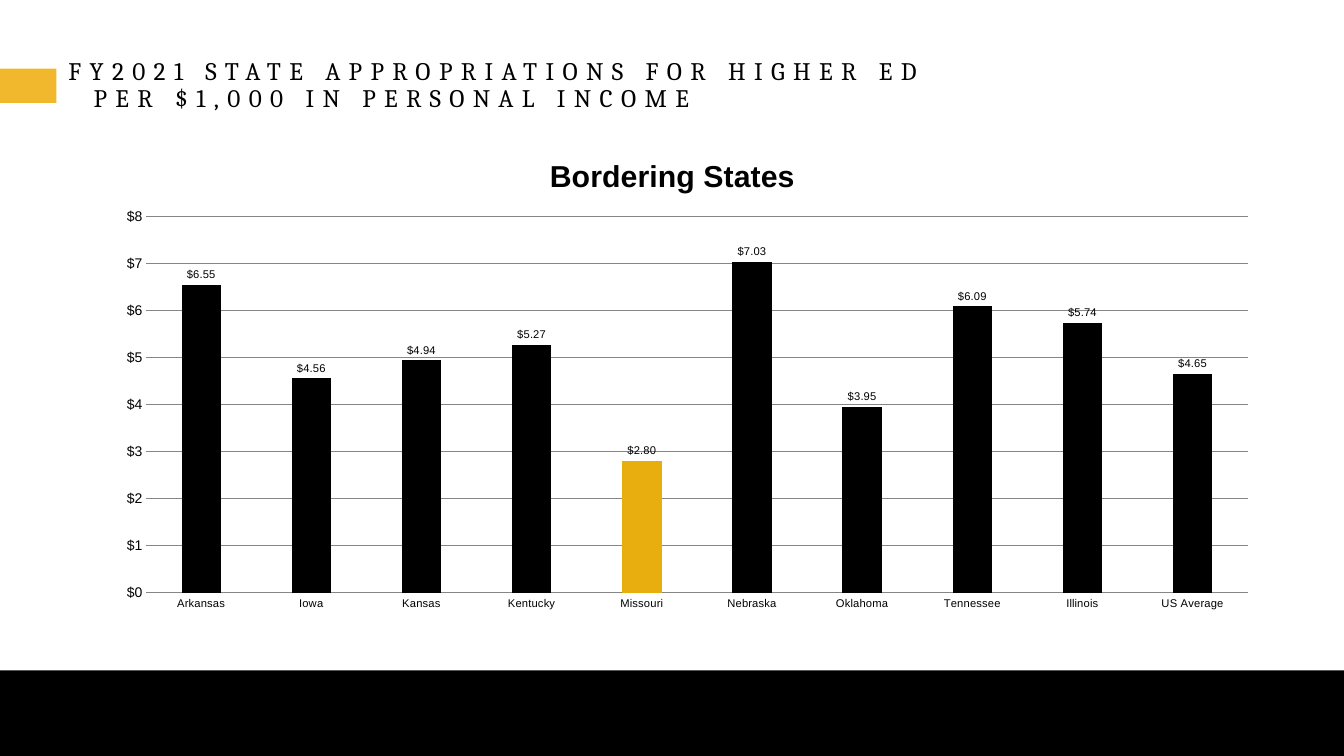
from dataclasses import dataclass

from lxml import etree
from pptx import Presentation
from pptx.chart.data import CategoryChartData
from pptx.dml.color import RGBColor
from pptx.enum.chart import XL_CHART_TYPE, XL_LABEL_POSITION, XL_TICK_MARK
from pptx.enum.shapes import MSO_SHAPE
from pptx.enum.text import MSO_ANCHOR, PP_ALIGN
from pptx.oxml.ns import qn
from pptx.util import Inches, Pt

RECT = MSO_SHAPE.RECTANGLE
COLUMNS = XL_CHART_TYPE.COLUMN_CLUSTERED
OUTSIDE = XL_LABEL_POSITION.OUTSIDE_END
NO_TICK = XL_TICK_MARK.NONE
MIDDLE = MSO_ANCHOR.MIDDLE
LEFT = PP_ALIGN.LEFT

APPROPRIATIONS = {
    "Arkansas": 6.55, "Iowa": 4.56, "Kansas": 4.94, "Kentucky": 5.27,
    "Missouri": 2.80, "Nebraska": 7.03, "Oklahoma": 3.95,
    "Tennessee": 6.09, "Illinois": 5.74, "US Average": 4.65,
}


@dataclass(frozen=True)
class Theme:
    black: RGBColor = RGBColor(0x00, 0x00, 0x00)
    gold: RGBColor = RGBColor(0xF1, 0xB8, 0x2D)
    highlight: RGBColor = RGBColor(0xE8, 0xAE, 0x10)
    grid: RGBColor = RGBColor(0x86, 0x86, 0x86)
    heading_font: str = "Cambria"
    chart_font: str = "Arial"
    heading_size: Pt = Pt(18)
    title_size: Pt = Pt(21.6)
    axis_size: Pt = Pt(10)
    label_size: Pt = Pt(8)
    tracking: int = 600


class SlideBuilder:
    def __init__(self, prs, theme):
        self.theme = theme
        self.slide = prs.slides.add_slide(prs.slide_layouts[6])
        self.col = prs.slide_width / 100
        self.row = prs.slide_height / 100

    def box(self, col, row, cols, rows):
        return (round(col * self.col), round(row * self.row),
                round(cols * self.col), round(rows * self.row))

    def style(self, font, size, name, bold=False):
        font.size = size
        font.name = name
        font.bold = bold
        font.color.rgb = self.theme.black

    def bar(self, cell, color):
        sp = self.slide.shapes.add_shape(RECT, *self.box(*cell))
        sp.shadow.inherit = False
        sp.fill.solid()
        sp.fill.fore_color.rgb = color
        sp.line.fill.background()

    def heading(self, cell, text):
        sp = self.slide.shapes.add_textbox(*self.box(*cell))
        tf = sp.text_frame
        tf.word_wrap = True
        tf.vertical_anchor = MIDDLE
        p = tf.paragraphs[0]
        p.text = text
        p.alignment = LEFT
        p.line_spacing = 0.9
        pPr = p._p.get_or_add_pPr()
        pPr.set("marL", str(Inches(0.25)))
        pPr.set("indent", str(-Inches(0.25)))
        for r in p.runs:
            self.style(r.font, self.theme.heading_size, self.theme.heading_font)
            r.font._element.set("spc", str(self.theme.tracking))

    def column_chart(self, cell, title, values, highlighted, plot_area):
        theme = self.theme
        data = CategoryChartData()
        data.categories = list(values)
        data.add_series(title, list(values.values()))
        frame = self.slide.shapes.add_chart(COLUMNS, *self.box(*cell), data)
        chart = frame.chart
        self.style(chart.font, theme.heading_size, theme.chart_font)
        chart.has_legend = False
        chart.has_title = True
        tf = chart.chart_title.text_frame
        tf.text = title
        self.style(tf.paragraphs[0].runs[0].font, theme.title_size, theme.chart_font, True)

        plot = chart.plots[0]
        plot.gap_width = 180
        plot.overlap = 75
        plot.vary_by_categories = False
        series = plot.series[0]
        series.format.fill.solid()
        series.format.fill.fore_color.rgb = theme.black
        fill = series.points[list(values).index(highlighted)].format.fill
        fill.solid()
        fill.fore_color.rgb = theme.highlight

        plot.has_data_labels = True
        labels = plot.data_labels
        labels.show_value = True
        labels.position = OUTSIDE
        labels.number_format = '"$"#,##0.00'
        labels.number_format_is_linked = False
        self.style(labels.font, theme.label_size, theme.chart_font)
        self.axes(chart)
        self.place_plot(chart, plot_area)

    def axes(self, chart):
        theme = self.theme
        cat, val = chart.category_axis, chart.value_axis
        for axis, size in ((cat, theme.label_size), (val, theme.axis_size)):
            axis.major_tick_mark = NO_TICK
            axis.minor_tick_mark = NO_TICK
            self.style(axis.tick_labels.font, size, theme.chart_font)
        cat.format.line.color.rgb = theme.grid
        val.format.line.fill.background()
        val.minimum_scale, val.maximum_scale, val.major_unit = 0, 8, 1
        val.tick_labels.number_format = '"$"#,##0'
        val.tick_labels.number_format_is_linked = False
        val.has_major_gridlines = True
        line = val.major_gridlines.format.line
        line.color.rgb = theme.grid
        line.width = Pt(0.75)

    def place_plot(self, chart, shares):
        area = chart._chartSpace.find(".//" + qn("c:plotArea"))
        for old in area.findall(qn("c:layout")):
            area.remove(old)
        layout = etree.Element(qn("c:layout"))
        manual = etree.SubElement(layout, qn("c:manualLayout"))
        settings = [("layoutTarget", "inner"), ("xMode", "edge"), ("yMode", "edge")]
        settings += zip("xywh", shares)
        for tag, value in settings:
            etree.SubElement(manual, qn("c:" + tag)).set("val", str(value))
        area.insert(0, layout)


def main():
    prs = Presentation()
    prs.slide_width = Inches(13.33)
    prs.slide_height = Inches(7.5)
    theme = Theme()
    s = SlideBuilder(prs, theme)
    s.bar((0, 88.67, 100, 11.33), theme.black)
    s.bar((0, 9.07, 4.2, 4.53), theme.gold)
    s.heading((4.35, 9.07, 91.07, 4.53),
              "FY2021 STATE APPROPRIATIONS FOR HIGHER ED\vPER $1,000 IN PERSONAL INCOME")
    s.column_chart((4.5, 18, 91.07, 66.4), "Bordering States", APPROPRIATIONS,
                   "Missouri", (0.07, 0.16, 0.9, 0.75))
    prs.save("out.pptx")


if __name__ == "__main__":
    main()
